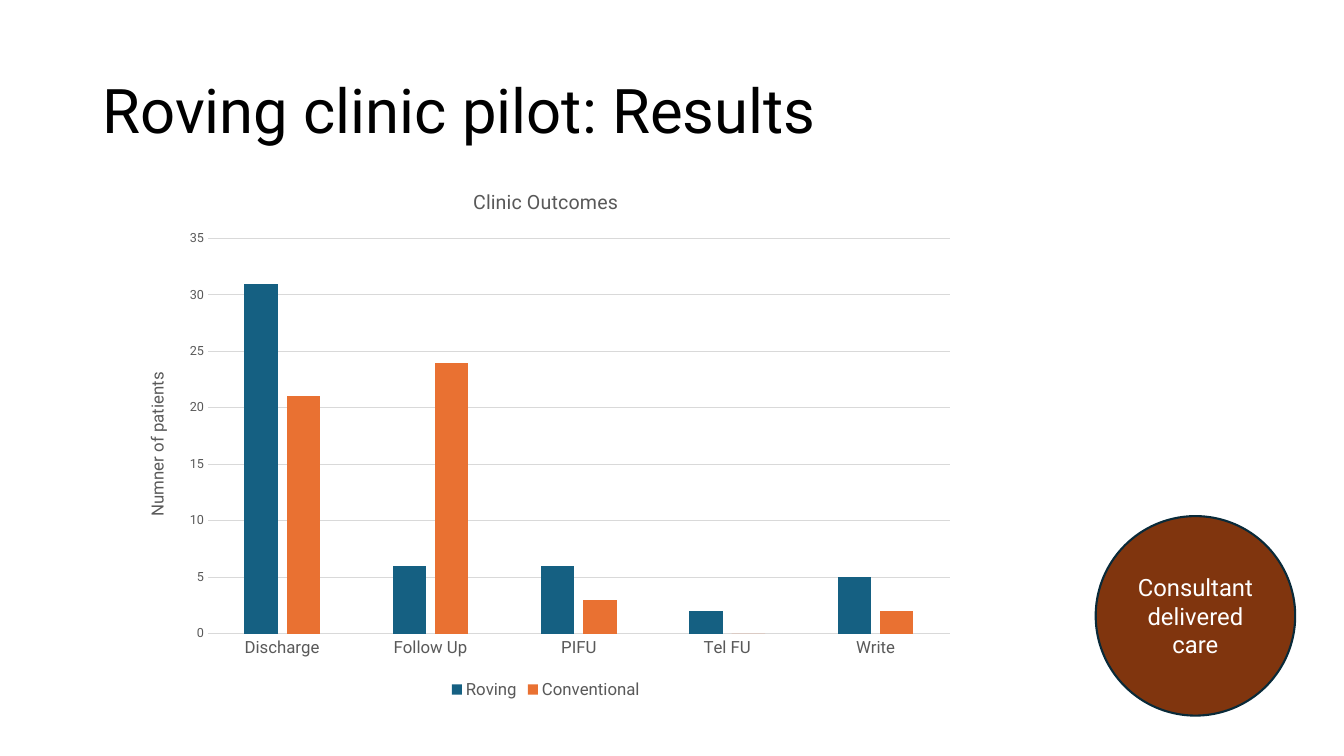
"""Build the slide with the results of the roving clinic pilot."""
from pptx import Presentation
from pptx.chart.data import CategoryChartData
from pptx.dml.color import RGBColor
from pptx.enum.chart import XL_CHART_TYPE, XL_LEGEND_POSITION, XL_TICK_MARK
from pptx.enum.shapes import MSO_SHAPE
from pptx.enum.text import MSO_ANCHOR, PP_ALIGN
from pptx.util import Pt

FONT = "Roboto"
BLACK = RGBColor(0x00, 0x00, 0x00)
WHITE = RGBColor(0xFF, 0xFF, 0xFF)
GREY = RGBColor(0x59, 0x59, 0x59)
LIGHT_GREY = RGBColor(0xD9, 0xD9, 0xD9)
BLUE = RGBColor(0x15, 0x60, 0x82)
ORANGE = RGBColor(0xE9, 0x71, 0x32)
BROWN = RGBColor(0x80, 0x35, 0x0E)
NAVY = RGBColor(0x09, 0x2A, 0x39)

OUTCOMES = ["Discharge", "Follow Up", "PIFU", "Tel FU", "Write"]
CLINICS = [
    ("Roving", [31, 6, 6, 2, 5], BLUE),
    ("Conventional", [21, 24, 3, 0, 2], ORANGE),
]


def style_font(font, size, color):
    """Apply the slide's typeface with a size and colour."""
    font.name = FONT
    font.size = Pt(size)
    font.bold = False
    font.color.rgb = color


def style_line(line, color, width):
    """Give a line a solid colour and width."""
    line.color.rgb = color
    line.width = Pt(width)


def set_chart_text(titled, text, size):
    """Write the title of a chart or an axis."""
    frame = (titled.chart_title if hasattr(titled, "chart_title")
             else titled.axis_title).text_frame
    frame.text = text
    style_font(frame.paragraphs[0].font, size, GREY)


def add_heading(slide, text):
    """Fill and place the title placeholder."""
    heading = slide.shapes.title
    heading.left, heading.top = Pt(66), Pt(28.75)
    heading.width, heading.height = Pt(828), Pt(104.4)
    frame = heading.text_frame
    frame.text = text
    frame.vertical_anchor = MSO_ANCHOR.MIDDLE
    paragraph = frame.paragraphs[0]
    paragraph.alignment = PP_ALIGN.LEFT
    paragraph.line_spacing = 0.9
    style_font(paragraph.font, 44, BLACK)


def style_axes(chart):
    """Format the outcome axis and the patient count axis."""
    outcomes, patients = chart.category_axis, chart.value_axis
    for axis, size in ((outcomes, 12), (patients, 9)):
        axis.major_tick_mark = axis.minor_tick_mark = XL_TICK_MARK.NONE
        style_font(axis.tick_labels.font, size, GREY)
    style_line(outcomes.format.line, LIGHT_GREY, 0.75)
    patients.format.line.fill.background()
    patients.minimum_scale, patients.maximum_scale = 0, 35
    patients.major_unit = 5
    style_line(patients.major_gridlines.format.line, LIGHT_GREY, 0.75)
    set_chart_text(patients, "Numner of patients", 12)


def add_outcome_chart(slide):
    """Add the clustered columns that compare the two clinics."""
    data = CategoryChartData()
    data.categories = OUTCOMES
    for name, counts, _ in CLINICS:
        data.add_series(name, counts)
    chart = slide.shapes.add_chart(
        XL_CHART_TYPE.COLUMN_CLUSTERED,
        Pt(89.3), Pt(120.25), Pt(601.2), Pt(382.3), data).chart
    style_font(chart.font, 10, BLACK)
    set_chart_text(chart, "Clinic Outcomes", 14)
    chart.chart_title.include_in_layout = False
    style_axes(chart)

    chart.has_legend = True
    chart.legend.position = XL_LEGEND_POSITION.BOTTOM
    chart.legend.include_in_layout = False
    style_font(chart.legend.font, 12, GREY)

    plot = chart.plots[0]
    plot.gap_width, plot.overlap = 219, -27
    plot.vary_by_categories = False
    for series, (_, _, color) in zip(plot.series, CLINICS):
        series.format.fill.solid()
        series.format.fill.fore_color.rgb = color
        series.invert_if_negative = False


def add_badge(slide, text):
    """Add the round badge at the lower right."""
    badge = slide.shapes.add_shape(
        MSO_SHAPE.OVAL, Pt(782.65), Pt(368.65), Pt(142.5), Pt(142.5))
    badge.shadow.inherit = False
    badge.fill.solid()
    badge.fill.fore_color.rgb = BROWN
    style_line(badge.line, NAVY, 1.5)
    frame = badge.text_frame
    frame.text = text
    frame.word_wrap = True
    frame.vertical_anchor = MSO_ANCHOR.MIDDLE
    paragraph = frame.paragraphs[0]
    paragraph.alignment = PP_ALIGN.CENTER
    style_font(paragraph.font, 17, WHITE)


def main():
    """Compose and save the slide."""
    deck = Presentation()
    deck.slide_width, deck.slide_height = Pt(960), Pt(540)
    slide = deck.slides.add_slide(deck.slide_layouts.get_by_name("Title Only"))
    add_heading(slide, "Roving clinic pilot: Results")
    add_outcome_chart(slide)
    add_badge(slide, "Consultant delivered care")
    deck.save("out.pptx")


if __name__ == "__main__":
    main()
